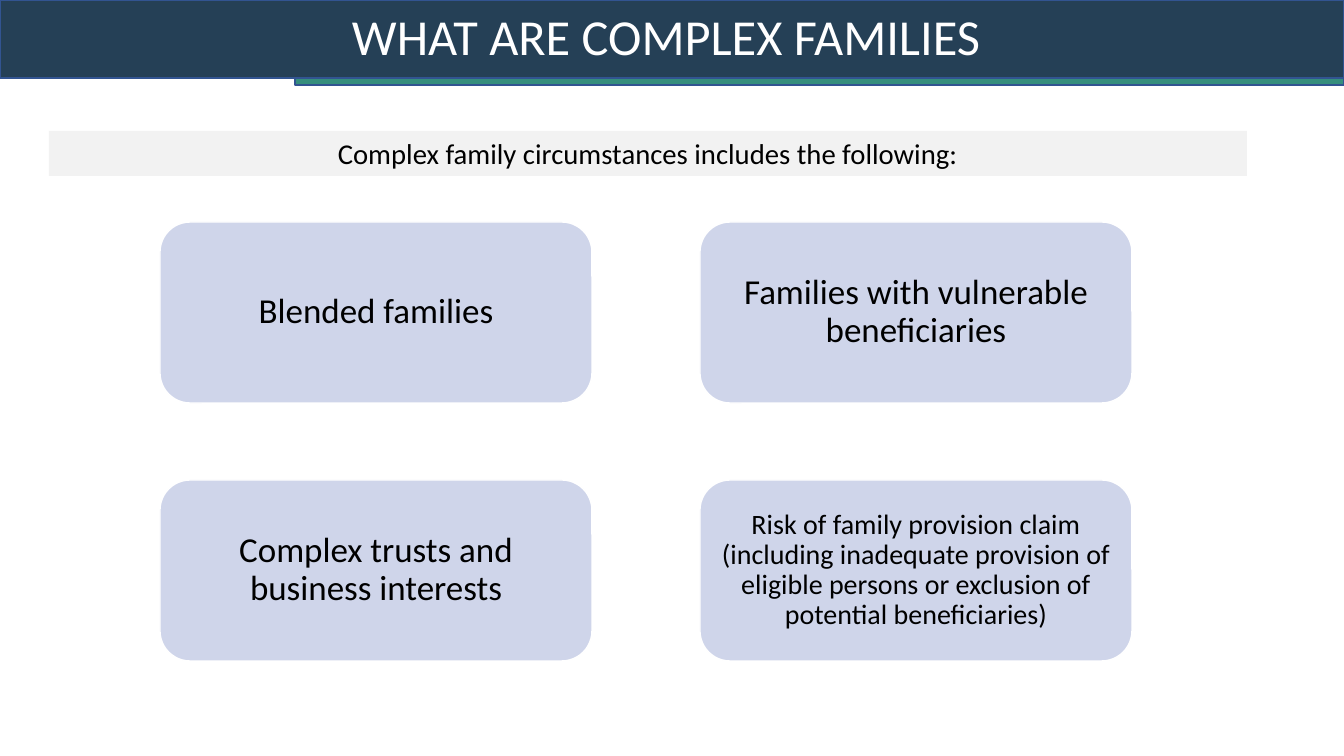
import pptx
import pptx.util
from pptx.dml.color import RGBColor
from pptx.enum.shapes import MSO_SHAPE
from pptx.enum.text import MSO_ANCHOR, PP_ALIGN

TITLE = "WHAT ARE COMPLEX FAMILIES "
INTRO = "Complex family circumstances includes the following:"
CARDS = [
    ("Blended families", 25),
    ("Families with vulnerable beneficiaries", 25),
    ("Complex trusts and business interests", 25),
    ("Risk of family provision claim (including inadequate provision of "
     "eligible persons or exclusion of potential beneficiaries)", 20),
]
COLORS = {
    "navy": "254056", "teal": "368E7D", "outline": "325491", "card": "CFD5EA",
    "intro": "F2F2F2", "white": "FFFFFF", "black": "000000",
}
FONT = "Calibri"
PX = 914400 / 100.8

SLIDE_WIDTH, SLIDE_HEIGHT = 1344, 756
HEADER_HEIGHT = 78
ACCENT_LEFT, ACCENT_HEIGHT = 295, 7
INTRO_BOX = (49, 131, 1198, 45)
CARD_LEFT, CARD_TOP = 160, 222
CARD_WIDTH, CARD_HEIGHT = 432, 181
COLUMN_STEP, ROW_STEP = 540, 258
COLUMNS = 2


def px(length):
    return round(length * PX)


def add_box(slide, kind, box, fill, line=None):
    shape = slide.shapes.add_shape(kind, *map(px, box))
    shape.shadow.inherit = False
    shape.fill.solid()
    shape.fill.fore_color.rgb = RGBColor.from_string(COLORS[fill])
    if line:
        shape.line.color.rgb = RGBColor.from_string(COLORS[line])
        shape.line.width = pptx.util.Pt(1)
    else:
        shape.line.fill.background()
    return shape


def write(shape, text, size, color="black", spacing=0.9):
    """Put one centred paragraph in the middle of a shape."""
    frame = shape.text_frame
    frame.word_wrap = True
    frame.vertical_anchor = MSO_ANCHOR.MIDDLE
    paragraph = frame.paragraphs[0]
    paragraph.text = text
    paragraph.alignment = PP_ALIGN.CENTER
    paragraph.line_spacing = spacing
    paragraph.font.name = FONT
    paragraph.font.size = pptx.util.Pt(size)
    paragraph.font.color.rgb = RGBColor.from_string(COLORS[color])


def main():
    presentation = pptx.Presentation()
    presentation.slide_width = px(SLIDE_WIDTH)
    presentation.slide_height = px(SLIDE_HEIGHT)
    slide = presentation.slides.add_slide(presentation.slide_layouts[6])

    header = add_box(slide, MSO_SHAPE.RECTANGLE,
                     (0, 0, SLIDE_WIDTH, HEADER_HEIGHT), "navy", "outline")
    write(header, TITLE, 36, "white")
    add_box(slide, MSO_SHAPE.RECTANGLE,
            (ACCENT_LEFT, HEADER_HEIGHT, SLIDE_WIDTH - ACCENT_LEFT, ACCENT_HEIGHT),
            "teal", "outline")

    for index, (text, size) in enumerate(CARDS):
        row, column = divmod(index, COLUMNS)
        box = (CARD_LEFT + column * COLUMN_STEP, CARD_TOP + row * ROW_STEP,
               CARD_WIDTH, CARD_HEIGHT)
        card = add_box(slide, MSO_SHAPE.ROUNDED_RECTANGLE, box, "card", "white")
        write(card, text, size)

    intro = add_box(slide, MSO_SHAPE.RECTANGLE, INTRO_BOX, "intro")
    write(intro, INTRO, 20.5, spacing=1.0)

    presentation.save("out.pptx")


if __name__ == "__main__":
    main()
